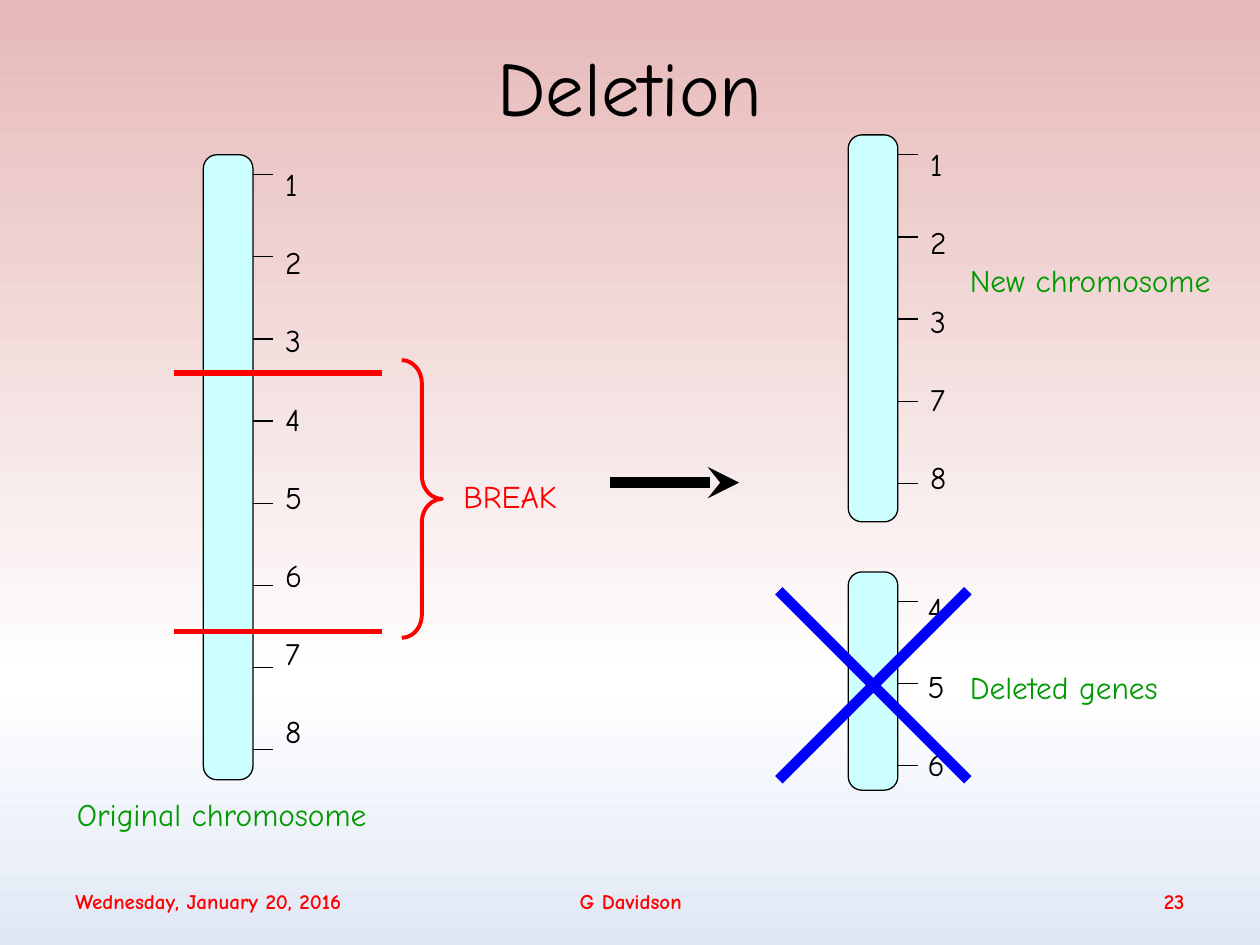
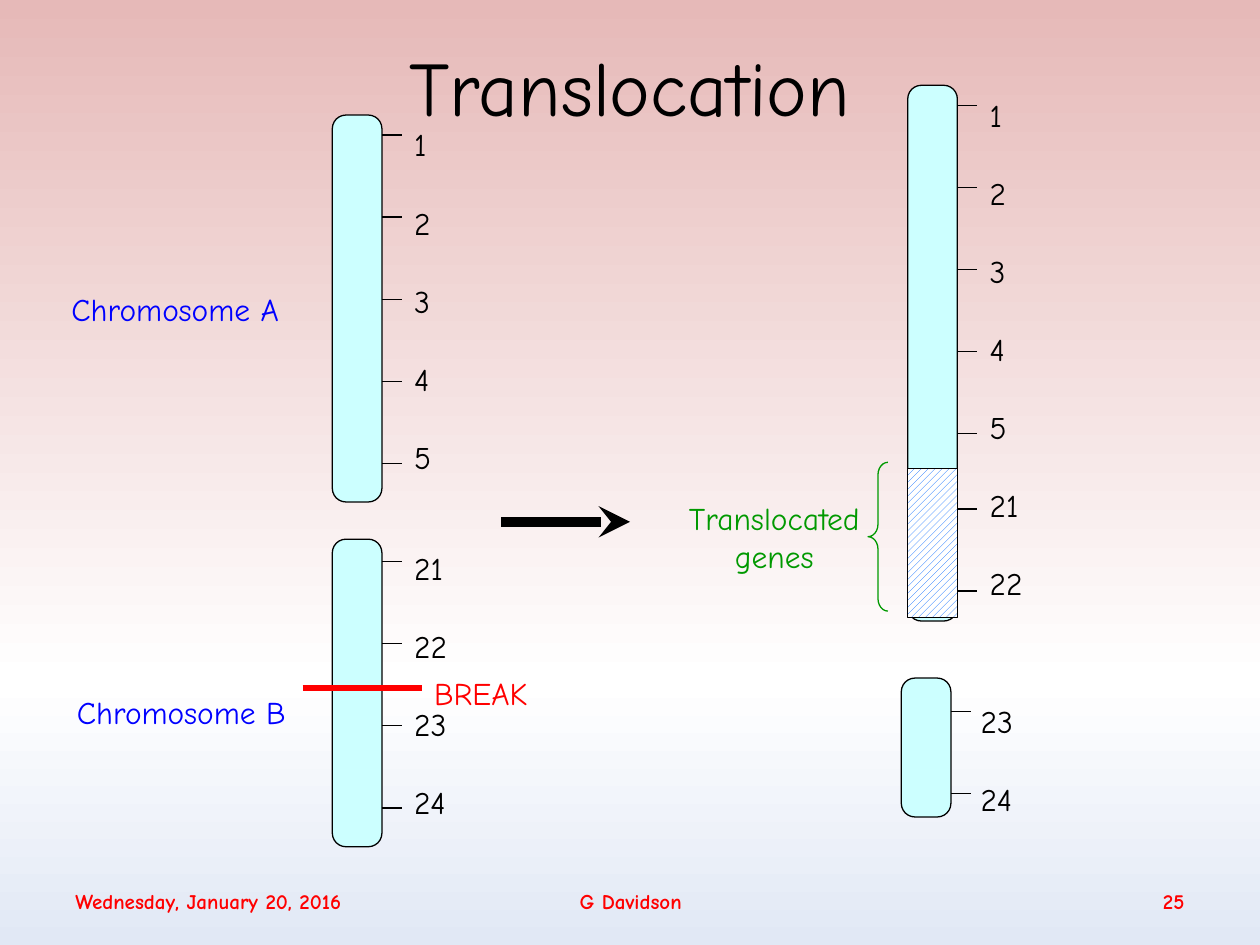
"""Build two slides on chromosome mutations."""
import copy

import lxml.etree
import pptx
import pptx.dml.color
import pptx.enum.dml
import pptx.enum.shapes
import pptx.enum.text
import pptx.oxml.ns
import pptx.util

Cm = pptx.util.Cm
Pt = pptx.util.Pt
SHAPE = pptx.enum.shapes.MSO_SHAPE
ALIGN = pptx.enum.text.PP_ALIGN
ANCHOR = pptx.enum.text.MSO_ANCHOR
qn = pptx.oxml.ns.qn

FONT = "Comic Neue"
BLACK, RED, GREEN, BLUE = "000000", "FF0000", "009900", "0000FF"
CYAN, SKY, WHITE = "CCFFFF", "0066FF", "FFFFFF"
STOPS = [(0, "E6B9B8"), (0.72, WHITE), (1, "E1E8F5")]
WIDTH = 1.0
TICK = 0.4
PITCH = 1.656


def rgb(code):
    """Turn a hex string into a colour."""
    return pptx.dml.color.RGBColor.from_string(code)


def write(frame, text, size=18, color=BLACK, bold=False, align=ALIGN.LEFT,
          anchor=ANCHOR.TOP, space=None, before=0):
    """Fill a text frame, one paragraph for each line of text."""
    frame.word_wrap = True
    frame.vertical_anchor = anchor
    for num, line in enumerate(text.split("\n")):
        para = frame.add_paragraph() if num else frame.paragraphs[0]
        para.alignment = align
        para.line_spacing = space
        para.space_before = Pt(before if num else 0)
        run = para.add_run()
        run.text = line
        run.font.name = FONT
        run.font.size = Pt(size)
        run.font.bold = bold
        run.font.color.rgb = rgb(color)


def label(slide, text, left, top, width, height=1.02, **style):
    """Add a text box."""
    box = slide.shapes.add_textbox(Cm(left), Cm(top), Cm(width), Cm(height))
    write(box.text_frame, text, **style)


def shape(slide, kind, left, top, width, height, fill=None, line=BLACK,
          weight=0.75, adjust=()):
    """Add a preset shape with a flat fill or none."""
    item = slide.shapes.add_shape(kind, Cm(left), Cm(top), Cm(width), Cm(height))
    item.shadow.inherit = False
    if fill:
        item.fill.solid()
        item.fill.fore_color.rgb = rgb(fill)
    else:
        item.fill.background()
    item.line.color.rgb = rgb(line)
    item.line.width = Pt(weight)
    for num, value in enumerate(adjust):
        item.adjustments[num] = value
    return item


def stroke(slide, x1, y1, x2, y2, color=BLACK, weight=0.75, arrow=False):
    """Add a straight line, with an arrowhead at its end if asked."""
    kind = pptx.enum.shapes.MSO_CONNECTOR.STRAIGHT
    item = slide.shapes.add_connector(kind, Cm(x1), Cm(y1), Cm(x2), Cm(y2))
    item.line.color.rgb = rgb(color)
    item.line.width = Pt(weight)
    props = item.element.spPr
    if arrow:
        line = props.find(qn("a:ln"))
        lxml.etree.SubElement(line, qn("a:tailEnd"), type="stealth")
    lxml.etree.SubElement(props, qn("a:effectLst"))


def ticks(slide, left, top, count):
    """Draw evenly spaced gene marks."""
    for num in range(count):
        y = top + num * PITCH
        stroke(slide, left, y, left + TICK, y)


def chromo(slide, genes, left, top, height, first=0.4, rise=0.81,
           indent=1.4, marks=None):
    """Draw a chromosome with its gene marks and numbers."""
    shape(slide, SHAPE.ROUNDED_RECTANGLE, left, top, WIDTH, height,
          fill=CYAN, adjust=[0.274])
    ticks(slide, left + WIDTH, top + first, marks or len(genes))
    label(slide, "\n".join(genes), left + indent, top + first - rise, 1.8,
          PITCH * len(genes), space=1.65, before=9)


def arrow(slide, left, top):
    """Draw the thick arrow from before to after."""
    stroke(slide, left, top, left + 2.6, top, weight=6, arrow=True)


def shade(master):
    """Give the master its three-stop gradient."""
    fill = master.background.fill
    fill.gradient()
    fill.gradient_angle = 270
    stops = master.element.find(".//" + qn("p:bgPr")).find(".//" + qn("a:gsLst"))
    stops.insert(1, copy.deepcopy(stops[0]))
    for stop, (place, color) in zip(fill.gradient_stops, STOPS):
        stop.position = place
        stop.color.rgb = rgb(color)


def start(deck, title, page):
    """Add a slide with its title and footer."""
    slide = deck.slides.add_slide(deck.slide_layouts[5])
    head = slide.shapes.title
    head.left, head.top = Cm(1.27), Cm(0.13)
    head.width, head.height = Cm(22.86), Cm(3.18)
    write(head.text_frame, title, size=44, align=ALIGN.CENTER,
          anchor=ANCHOR.MIDDLE)
    foot = [("Wednesday, January 20, 2016", 1.27, 8.43, ALIGN.LEFT),
            ("G Davidson", 8.69, 8.05, ALIGN.CENTER),
            (str(page), 18.21, 5.92, ALIGN.RIGHT)]
    for text, left, width, align in foot:
        label(slide, text, left, 17.65, width, size=12, color=RED, bold=True,
              align=align, anchor=ANCHOR.MIDDLE)
    return slide


def delete(deck):
    """Build the deletion slide."""
    slide = start(deck, "Deletion", 23)
    chromo(slide, "12378", 17.1, 2.72, 7.8)
    label(slide, "New chromosome", 19.3, 5.13, 5.79, color=GREEN)

    chromo(slide, "12345678", 4.1, 3.12, 12.6)
    for y in (7.52, 12.73):
        stroke(slide, 3.5, y, 7.7, y, color=RED, weight=3)
    shape(slide, SHAPE.RIGHT_BRACE, 8.1, 7.26, 0.81, 5.6, line=RED,
          weight=2.25, adjust=[0.582, 0.5])
    label(slide, "BREAK", 9.09, 9.5, 3, color=RED)
    label(slide, "Original chromosome", 1.3, 15.9, 7.59, color=GREEN)
    arrow(slide, 12.3, 9.73)

    chromo(slide, "456", 17.1, 11.53, 4.4, first=0.59, rise=0.87, indent=1.35)
    label(slide, "Deleted genes", 19.3, 13.34, 5, color=GREEN)
    low, high = 15.72, 11.91
    for y1, y2 in ((low, high), (high, low)):
        stroke(slide, 15.7, y1, 19.51, y2, color=BLUE, weight=6)


def move(deck):
    """Build the translocation slide."""
    slide = start(deck, "Translocation", 25)
    chromo(slide, ["23", "24"], 18.17, 13.67, 2.8, first=0.67, indent=1.35)
    chromo(slide, ["1", "2", "3", "4", "5", "21", "22"], 18.3, 1.72, 10.8,
           marks=5)
    ticks(slide, 18.3 + WIDTH, 10.26, 2)
    patch = shape(slide, SHAPE.RECTANGLE, 18.3, 9.45, WIDTH, 3)
    patch.fill.patterned()
    patch.fill.pattern = pptx.enum.dml.MSO_PATTERN.WIDE_UPWARD_DIAGONAL
    patch.fill.fore_color.rgb = rgb(SKY)
    patch.fill.back_color.rgb = rgb(WHITE)
    shape(slide, SHAPE.LEFT_BRACE, 17.5, 9.32, 0.4, 3, line=GREEN,
          adjust=[0.63, 0.5])
    label(slide, "Translocated genes", 13.31, 9.93, 4.6, 1.78, color=GREEN,
          align=ALIGN.CENTER)

    chromo(slide, "12345", 6.7, 2.32, 7.8)
    arrow(slide, 10.1, 10.52)
    chromo(slide, ["21", "22", "23", "24"], 6.7, 10.87, 6.2, first=0.45,
           rise=0.88)
    label(slide, "Chromosome A", 1.19, 5.72, 5.49, color=BLUE)
    label(slide, "Chromosome B", 1.3, 13.84, 5.49, color=BLUE)
    stroke(slide, 6.1, 13.87, 8.5, 13.87, color=RED, weight=3)
    label(slide, "BREAK", 8.5, 13.46, 3, color=RED)


def main():
    """Build and save the deck."""
    deck = pptx.Presentation()
    deck.slide_width, deck.slide_height = Cm(25.4), Cm(19.05)
    shade(deck.slide_master)
    delete(deck)
    move(deck)
    deck.save("out.pptx")


if __name__ == "__main__":
    main()
